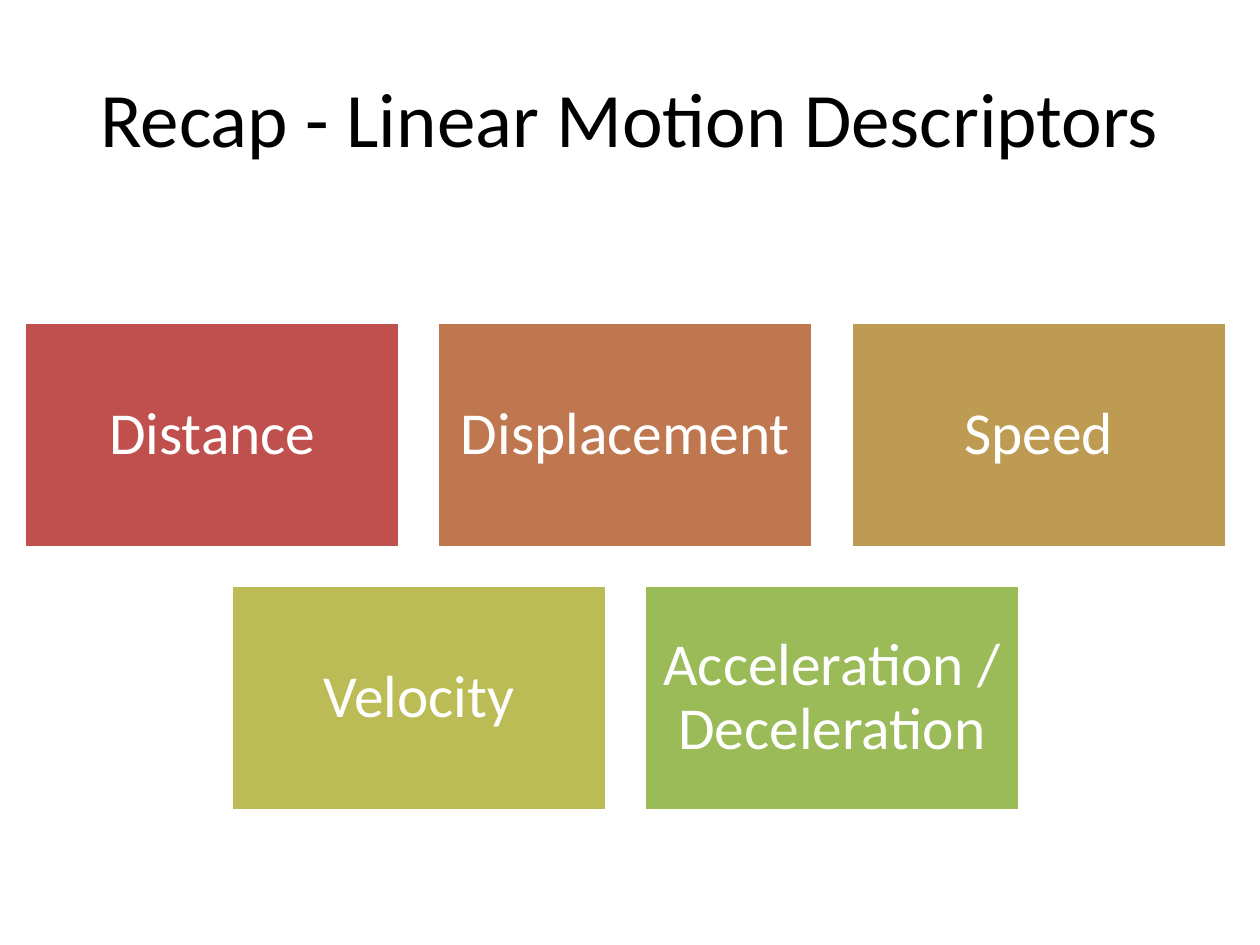
"""Build the recap slide on linear motion descriptors."""
from dataclasses import dataclass

from pptx import Presentation
from pptx.dml.color import RGBColor
from pptx.enum.shapes import MSO_SHAPE
from pptx.enum.text import MSO_ANCHOR, PP_ALIGN
from pptx.util import Cm, Pt

TITLE = "Recap - Linear Motion Descriptors"
ROWS = [
    [("Distance", "C0504D"), ("Displacement", "BF7750"), ("Speed", "BD9B53")],
    [("Velocity", "BCBC56"), ("Acceleration / Deceleration", "9BBB59")],
]


@dataclass(frozen=True)
class Theme:
    font: str = "Calibri"
    ink: str = "000000"
    light: str = "FFFFFF"
    title: int = 44
    label: int = 34
    line: int = 2


THEME = Theme()
WIDTH = 7.57
HEIGHT = WIDTH * 0.6
GAP = WIDTH * 0.1
MIDDLE = 12.61
TOP = 6.5


def write(shape, text, size, color, inset):
    frame = shape.text_frame
    frame.word_wrap = True
    frame.vertical_anchor = MSO_ANCHOR.MIDDLE
    frame.margin_left = frame.margin_right = Cm(inset)
    frame.margin_top = frame.margin_bottom = Cm(inset)
    para = frame.paragraphs[0]
    para.text = text
    para.alignment = PP_ALIGN.CENTER
    para.font.name = THEME.font
    para.font.size = Pt(size)
    para.font.color.rgb = RGBColor.from_string(color)
    return para


def add_tile(slide, left, top, text, color):
    tile = slide.shapes.add_shape(
        MSO_SHAPE.RECTANGLE, Cm(left), Cm(top), Cm(WIDTH), Cm(HEIGHT))
    tile.shadow.inherit = False
    tile.fill.solid()
    tile.fill.fore_color.rgb = RGBColor.from_string(color)
    tile.line.color.rgb = RGBColor.from_string(THEME.light)
    tile.line.width = Pt(THEME.line)
    para = write(tile, text, THEME.label, THEME.light, 0.36)
    para.line_spacing = 0.9


def main():
    deck = Presentation()
    deck.slide_width, deck.slide_height = Cm(25.4), Cm(19.05)
    slide = deck.slides.add_slide(deck.slide_layouts[6])
    head = slide.shapes.add_textbox(Cm(1.27), Cm(0.76), Cm(22.86), Cm(3.18))
    write(head, TITLE, THEME.title, THEME.ink, 0.13)
    for row, tiles in enumerate(ROWS):
        span = len(tiles) * (WIDTH + GAP) - GAP
        top = TOP + row * (HEIGHT + GAP)
        for col, (text, color) in enumerate(tiles):
            left = MIDDLE - span / 2 + col * (WIDTH + GAP)
            add_tile(slide, left, top, text, color)
    deck.save("out.pptx")


if __name__ == "__main__":
    main()
